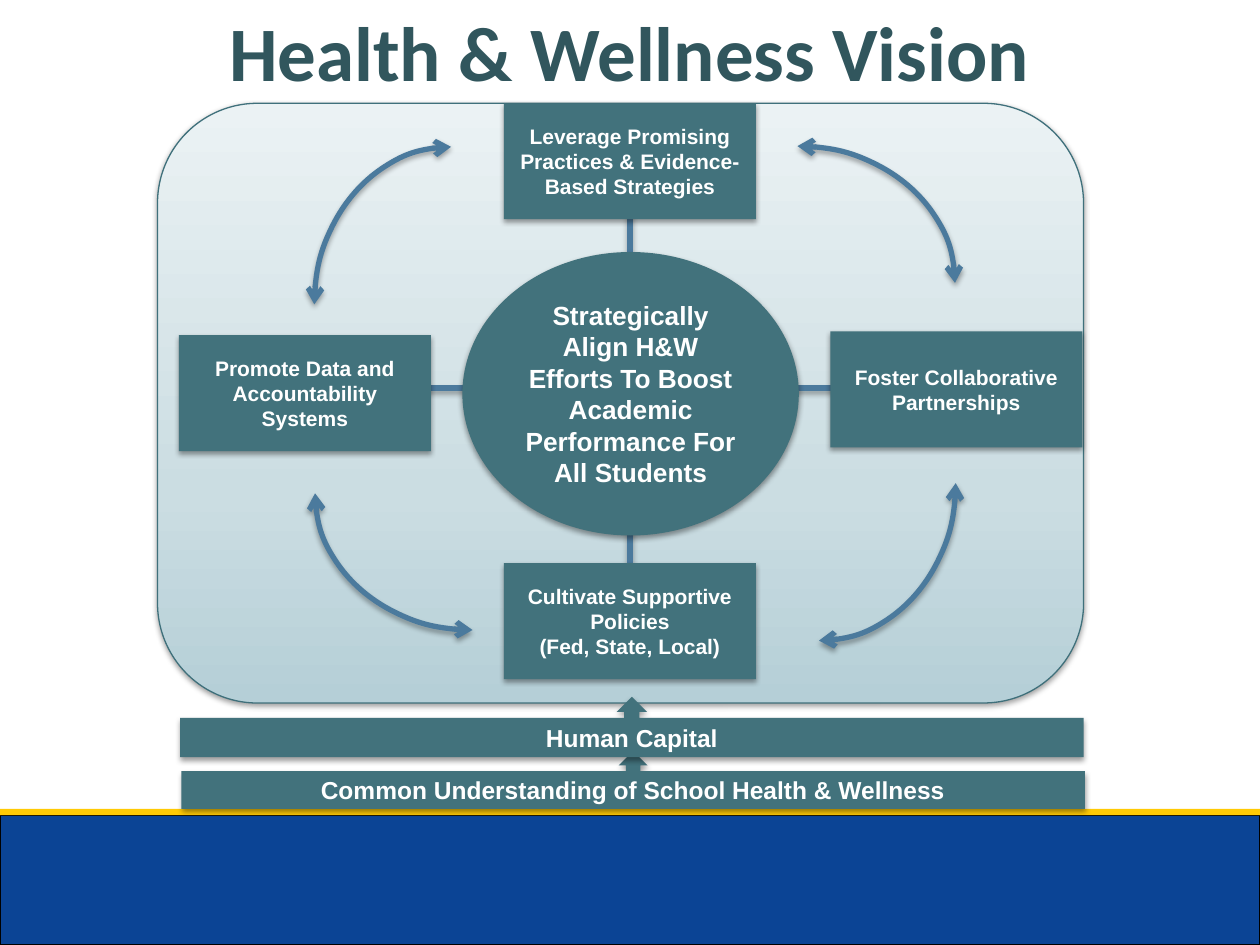
from copy import deepcopy

from lxml.etree import SubElement
from pptx import Presentation
from pptx.dml.color import RGBColor
from pptx.enum.shapes import MSO_CONNECTOR, MSO_SHAPE
from pptx.enum.text import MSO_ANCHOR, PP_ALIGN
from pptx.oxml.ns import qn
from pptx.util import Inches, Pt

TEAL = RGBColor(0x42, 0x72, 0x7C)
DARK_TEAL = RGBColor(0x31, 0x56, 0x5D)
EDGE_TEAL = RGBColor(0x3F, 0x70, 0x7B)
STEEL = RGBColor(0x4B, 0x7A, 0x9D)
NAVY = RGBColor(0x0B, 0x44, 0x95)
GOLD = RGBColor(0xFF, 0xCA, 0x05)
BLACK = RGBColor(0, 0, 0)
WHITE = RGBColor(0xFF, 0xFF, 0xFF)
PANEL_STOPS = [
    (0, RGBColor(0xB5, 0xCF, 0xD7)),
    (0.35, RGBColor(0xCB, 0xDD, 0xE2)),
    (1, RGBColor(0xEB, 0xF2, 0xF4)),
]


class VisionSlide:
    def __init__(self, slide):
        self.shapes = slide.shapes

    def cast_shadow(self, element, opacity, distance):
        """Give a shape or connector a soft shadow straight below it."""
        properties = element._element.spPr
        effects = properties.find(qn("a:effectLst"))
        if effects is None:
            effects = SubElement(properties, qn("a:effectLst"))
        shadow = SubElement(
            effects, qn("a:outerShdw"), blurRad=str(Pt(3.1)),
            dist=str(Pt(distance)), dir="5400000", rotWithShape="0")
        color = SubElement(shadow, qn("a:srgbClr"), val="000000")
        SubElement(color, qn("a:alpha"), val=str(opacity * 1000))

    def set_text(self, frame, text, size, color, font="Arial"):
        frame.word_wrap = True
        frame.text = text
        for paragraph in frame.paragraphs:
            paragraph.alignment = PP_ALIGN.CENTER
            for run in paragraph.runs:
                run.font.name = font
                run.font.size = Pt(size)
                run.font.bold = True
                run.font.color.rgb = color

    def title(self, text, *box):
        frame = self.shapes.add_textbox(*map(Inches, box)).text_frame
        frame.margin_top = Inches(0.08)
        frame.vertical_anchor = MSO_ANCHOR.TOP
        self.set_text(frame, text, 44, DARK_TEAL, "Calibri")

    def plain(self, kind, box, fill=None, edge=None, width=0.75):
        shape = self.shapes.add_shape(kind, *map(Inches, box))
        shape.shadow.inherit = False
        if fill is None:
            shape.fill.background()
        else:
            shape.fill.solid()
            shape.fill.fore_color.rgb = fill
        if edge is None:
            shape.line.fill.background()
        else:
            shape.line.color.rgb = edge
            shape.line.width = Pt(width)
        return shape

    def panel(self, *box):
        panel = self.plain(MSO_SHAPE.ROUNDED_RECTANGLE, box, edge=EDGE_TEAL)
        panel.fill.gradient()
        panel.fill.gradient_angle = 90
        first_stop = panel._element.spPr.find(".//" + qn("a:gs"))
        first_stop.addnext(deepcopy(first_stop))
        for stop, (position, color) in zip(panel.fill.gradient_stops, PANEL_STOPS):
            stop.position = position
            stop.color.rgb = color
        self.cast_shadow(panel, 38, 1.6)

    def block(self, kind, text, size, *box):
        block = self.plain(kind, box, fill=TEAL)
        self.cast_shadow(block, 38, 1.6)
        block.text_frame.vertical_anchor = MSO_ANCHOR.MIDDLE
        self.set_text(block.text_frame, text, size, WHITE)

    def spoke(self, *ends):
        spoke = self.shapes.add_connector(MSO_CONNECTOR.STRAIGHT, *map(Inches, ends))
        spoke.line.color.rgb = STEEL
        spoke.line.width = Pt(3)
        self.cast_shadow(spoke, 35, 1.8)

    def cycle_arrow(self, left, top, rotation):
        """Draw a quarter arc with an arrowhead at both ends."""
        arc = self.plain(MSO_SHAPE.ARC, (left, top, 2.5, 2.17), edge=STEEL, width=3)
        arc.rotation = rotation
        outline = arc._element.spPr.find(qn("a:ln"))
        for end in ("a:headEnd", "a:tailEnd"):
            SubElement(outline, qn(end), type="arrow")
        self.cast_shadow(arc, 35, 1.8)


def main():
    deck = Presentation()
    deck.slide_width = Inches(10)
    deck.slide_height = Inches(7.5)
    vision = VisionSlide(deck.slides.add_slide(deck.slide_layouts[6]))

    vision.plain(MSO_SHAPE.RECTANGLE, (0, 6.47, 10, 1.03), NAVY, BLACK)
    vision.plain(MSO_SHAPE.RECTANGLE, (0, 6.42, 10, 0.05), GOLD)
    vision.panel(1.25, 0.82, 7.35, 4.76)

    for ends in [
        (6.25, 3.08, 6.67, 3.08),
        (5, 2.32, 5, 1.65),
        (5, 4.75, 5, 4.08),
        (3.33, 3.08, 3.75, 3.08),
    ]:
        vision.spoke(*ends)

    vision.title("Health & Wellness Vision", 0.5, -0.04, 9, 0.7)
    vision.block(
        MSO_SHAPE.OVAL,
        "Strategically Align H&W Efforts To Boost Academic Performance For All Students",
        15, 3.67, 2, 2.67, 2.25)

    for left, top, rotation in [
        (5.08, 1.16, 0), (5.25, 2.75, 90), (2.33, 1.33, 270), (2.5, 2.83, 180),
    ]:
        vision.cycle_arrow(left, top, rotation)

    for foundation, left, top, height in [
        ("Common Understanding of School Health & Wellness", 1.44, 5.96, 0.46),
        ("Human Capital", 1.43, 5.53, 0.48),
    ]:
        vision.block(MSO_SHAPE.UP_ARROW_CALLOUT, foundation, 14,
                     left, top, 7.17, height)

    for strategy, left, top in [
        ("Foster Collaborative Partnerships", 6.59, 2.63),
        ("Leverage Promising Practices & Evidence-Based Strategies", 4, 0.82),
        ("Promote Data and Accountability Systems", 1.42, 2.66),
        ("Cultivate Supportive Policies\n(Fed, State, Local)", 4, 4.47),
    ]:
        vision.block(MSO_SHAPE.RECTANGLE, strategy, 12, left, top, 2, 0.92)

    deck.save("out.pptx")


if __name__ == "__main__":
    main()
